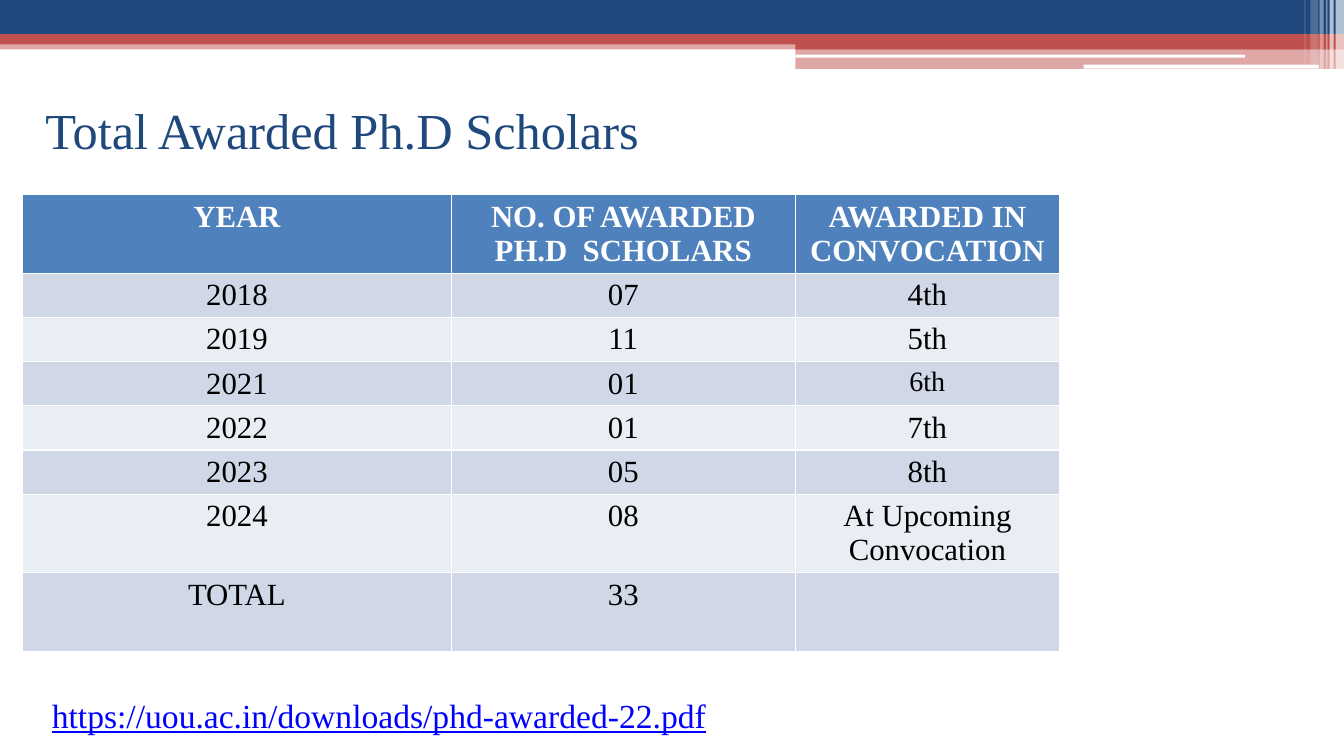
from dataclasses import dataclass

from lxml.etree import SubElement
from pptx import Presentation
from pptx.dml.color import RGBColor as Color
from pptx.enum.shapes import MSO_SHAPE as Shape
from pptx.enum.text import MSO_ANCHOR as Anchor, PP_ALIGN as Align
from pptx.oxml.ns import qn
from pptx.util import Inches, Pt


@dataclass(frozen=True)
class Theme:
    font: str = "Times New Roman"
    navy: str = "1F497D"
    red: str = "C0504D"
    header: str = "4F81BD"
    odd_band: str = "D0D8E8"
    even_band: str = "E9EDF4"
    white: str = "FFFFFF"
    black: str = "000000"
    link: str = "0000FF"
    title_size: int = 36
    link_size: int = 24
    table_size: int = 22
    small_size: int = 20


theme = Theme()

# The slide is a grid of 160 columns by 90 rows of square units
COLUMNS, ROWS = 160, 90
deck = Presentation()
deck.slide_width, deck.slide_height = Inches(40 / 3), Inches(7.5)
UNIT = deck.slide_height / ROWS
page = deck.slides.add_slide(deck.slide_layouts[5])


def grid(*lengths):
    return [round(length * UNIT) for length in lengths]


def style(para, size, color, bold=False):
    for span in para.runs:
        span.font.name, span.font.size = theme.font, Pt(size)
        span.font.bold, span.font.color.rgb = bold, Color.from_string(color)


# Top banner: left, top, width, height, colour, opacity in percent, shape
SPLIT = 94.7
RIGHT = COLUMNS - SPLIT
banner = [
    (0, 4.8, COLUMNS, 1.08, theme.red, 50, Shape.RECTANGLE),
    (0, 0, COLUMNS, 4.08, theme.navy, 100, Shape.RECTANGLE),
    (0, 4.08, COLUMNS, 1.2, theme.red, 100, Shape.RECTANGLE),
    (SPLIT, 4.7, RIGHT, 1.2, theme.red, 100, Shape.RECTANGLE),
    (SPLIT, 5.8, RIGHT, 2.4, theme.red, 50, Shape.RECTANGLE),
    (SPLIT, 6.5, 53.5, 0.36, theme.white, 100, Shape.ROUNDED_RECTANGLE),
    (129, 7.7, 28, 0.48, theme.white, 100, Shape.ROUNDED_RECTANGLE),
]
# Pale vertical stripes at the right end: left, width, height, opacity
stripes = [
    (159, 1, 8.2, 65),
    (158.3, 0.48, 8.2, 65),
    (157.9, 0.12, 8.2, 60),
    (157.1, 0.48, 8.2, 40),
    (156, 0.96, 7.7, 20),
    (155.3, 0.12, 7.7, 30),
]
banner += [(left, 0, width, height, theme.white, opacity, Shape.RECTANGLE)
           for left, width, height, opacity in stripes]
for left, top, width, height, color, opacity, kind in banner:
    bar = page.shapes.add_shape(kind, *grid(left, top, width, height))
    bar.shadow.inherit = False
    bar.line.fill.background()
    bar.fill.solid()
    bar.fill.fore_color.rgb = Color.from_string(color)
    if opacity < 100:
        tint = bar.fill._xPr.find(qn("a:solidFill"))[0]
        SubElement(tint, qn("a:alpha"), val=str(opacity * 1000))

# Title
title = page.shapes.title
title.left, title.top, title.width, title.height = grid(4.2, 8.4, 144, 14)
title.text_frame.text = "Total Awarded Ph.D Scholars"
title.text_frame.vertical_anchor = Anchor.MIDDLE
title.text_frame.paragraphs[0].alignment = Align.LEFT
style(title.text_frame.paragraphs[0], theme.title_size, theme.navy)

# Table of awards by year
records = [
    ("YEAR", "NO. OF AWARDED PH.D  SCHOLARS", "AWARDED IN CONVOCATION"),
    ("2018", "07", "4th"),
    ("2019", "11", "5th"),
    ("2021", "01", "6th"),
    ("2022", "01", "7th"),
    ("2023", "05", "8th"),
    ("2024", "08", "At Upcoming Convocation"),
    ("TOTAL", "33", ""),
]
column_widths = grid(51, 41, 31.4)
row_heights = grid(9.2, *[5.25] * 5, 9.35, 9.35)
table = page.shapes.add_table(len(records), len(column_widths), *grid(2.7, 23.2),
                              sum(column_widths), sum(row_heights)).table
for column, width in zip(table.columns, column_widths):
    column.width = width
for number, (record, height) in enumerate(zip(records, row_heights)):
    table.rows[number].height = height
    is_header = number == 0
    band = theme.odd_band if number % 2 else theme.even_band
    for cell, words in zip(table.rows[number].cells, record):
        cell.fill.solid()
        cell.fill.fore_color.rgb = Color.from_string(theme.header if is_header else band)
        cell.text_frame.text = words
        para = cell.text_frame.paragraphs[0]
        para.alignment = Align.CENTER
        style(para, theme.small_size if words == "6th" else theme.table_size,
              theme.white if is_header else theme.black, bold=is_header)

# Web address below the table
box = page.shapes.add_textbox(*grid(5, 82.1, 120.5, 7))
box.text_frame.word_wrap = True
box.text_frame.text = "https://uou.ac.in/downloads/phd-awarded-22.pdf"
address = box.text_frame.paragraphs[0]
style(address, theme.link_size, theme.link)
address.runs[0].font.underline = True

deck.save("out.pptx")
